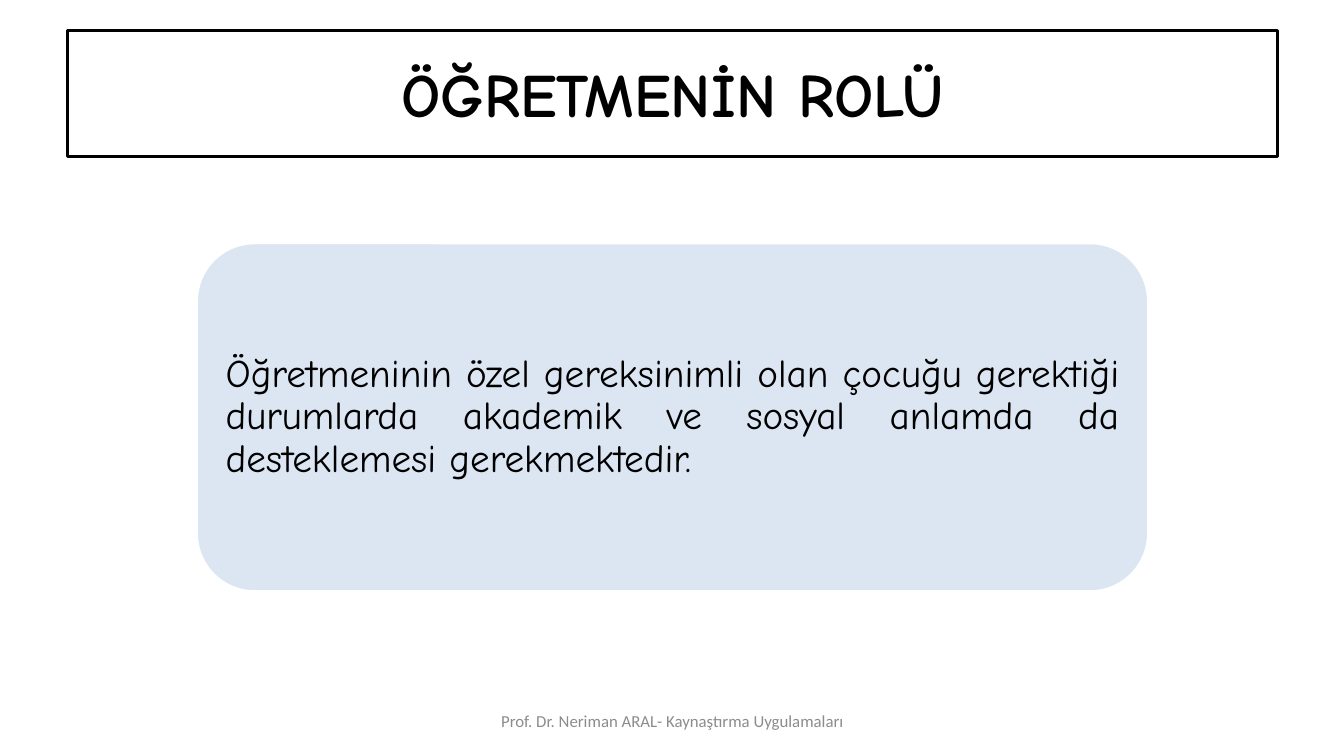
"""Build the slide on the teacher's role."""
from pptx import Presentation
from pptx import util as u
from pptx.dml.color import RGBColor
from pptx.enum import shapes, text

PX = 9144


def box(left, top, width, height):
    return [u.Emu(n * PX) for n in (left, top, width, height)]


def paint(part, code):
    part.solid()
    part.fore_color.rgb = RGBColor.from_string(code)


deck = Presentation()
deck.slide_width, deck.slide_height = 1333 * PX, 750 * PX
slide = deck.slides.add_slide(deck.slide_layouts[5])

card = slide.shapes.add_shape(
    shapes.MSO_SHAPE.ROUNDED_RECTANGLE, *box(195, 241, 944, 346))
card.shadow.inherit = False
foot = slide.shapes.add_textbox(*box(456, 695, 422, 40))
title = slide.shapes.title
title.left, title.top, title.width, title.height = box(67, 30, 1200, 125)

for shape, fill, line in ((card, "DCE6F2", "FFFFFF"),
                          (title, "FFFFFF", "000000")):
    paint(shape.fill, fill)
    paint(shape.line.fill, line)
    shape.line.width = u.Pt(2)

mid, just = text.PP_ALIGN.CENTER, text.PP_ALIGN.JUSTIFY
items = (
    (card, "Öğretmeninin özel gereksinimli olan çocuğu gerektiği durumlarda "
     "akademik ve sosyal anlamda da desteklemesi gerekmektedir.",
     28, "Comic Neue", "000000", False, just),
    (foot, "Prof. Dr. Neriman ARAL- Kaynaştırma Uygulamaları",
     12, "Calibri", "8C8C8C", False, mid),
    (title, "ÖĞRETMENİN ROLÜ", 44, "Comic Neue", "000000", True, mid),
)
for shape, words, size, face, code, bold, align in items:
    frame = shape.text_frame
    frame.word_wrap = True
    frame.auto_size = text.MSO_AUTO_SIZE.NONE
    frame.vertical_anchor = text.MSO_ANCHOR.MIDDLE
    para = frame.paragraphs[0]
    para.alignment = align
    run = para.add_run()
    run.text = words
    run.font.size, run.font.name, run.font.bold = u.Pt(size), face, bold
    paint(run.font.fill, code)

frame = card.text_frame
frame.margin_left = frame.margin_right = 12 * PX
frame.margin_top = frame.margin_bottom = 6 * PX
frame.paragraphs[0].line_spacing = 0.9

deck.save("out.pptx")
